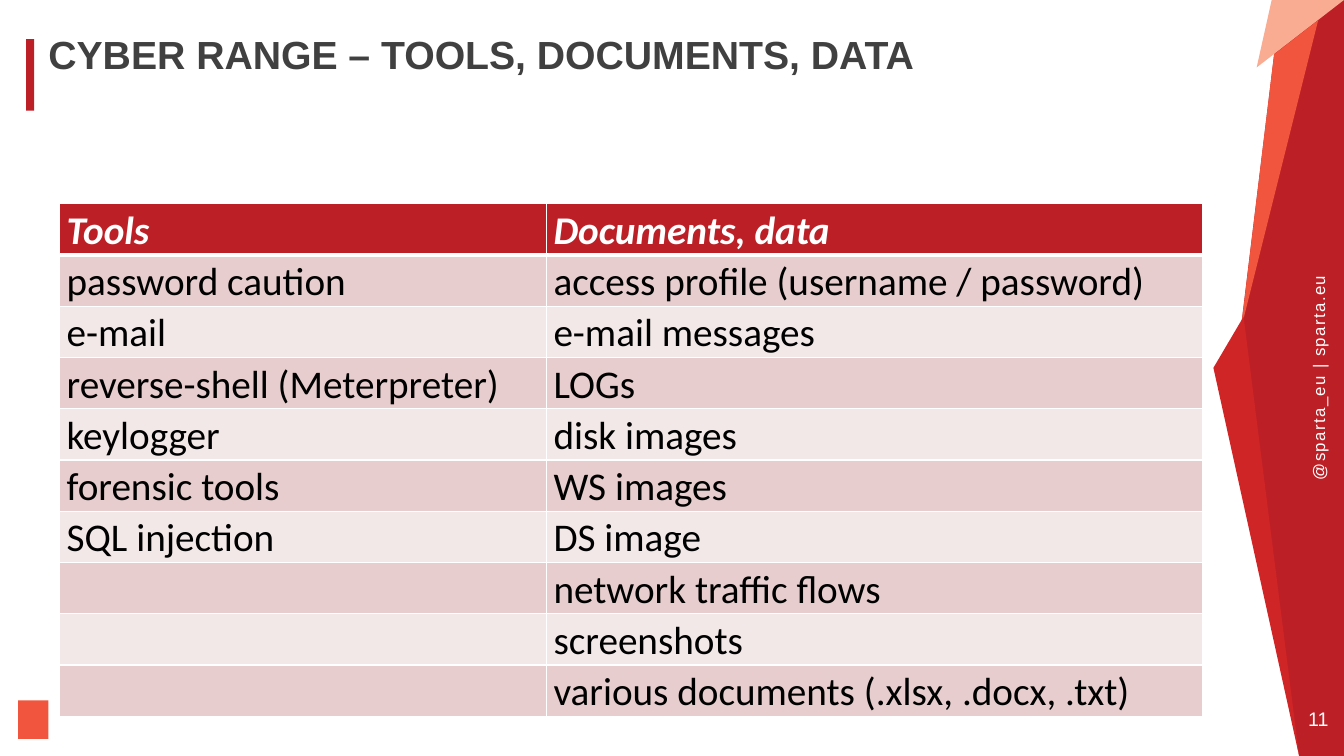
"""Build the slide on cyber range tools, documents and data."""
from typing import NamedTuple

from lxml.etree import SubElement
from pptx import Presentation
from pptx.dml.color import RGBColor
from pptx.enum.shapes import MSO_SHAPE
from pptx.enum.text import MSO_ANCHOR, PP_ALIGN
from pptx.oxml.ns import qn
from pptx.util import Cm, Pt

COLORS = {
    "red": "BC2026", "bright": "D02527", "orange": "F1553D", "peach": "F9AC91",
    "white": "FFFFFF", "black": "000000", "gray": "404040",
    "odd": "E7CDCD", "even": "F3E8E8",
}


class Facet(NamedTuple):
    color: str
    points: list[tuple[float, float]]


class Block(NamedTuple):
    color: str
    box: tuple[float, float, float, float]


class Label(NamedTuple):
    words: str
    box: tuple[float, float, float, float]
    style: dict
    turn: int = 0
    anchor: MSO_ANCHOR = MSO_ANCHOR.MIDDLE
    wrap: bool = False


WIDTH, HEIGHT = 33.87, 19.05

FACETS = [
    Facet("red", [(WIDTH, 0), (WIDTH, HEIGHT), (32.74, HEIGHT), (31.06, 10.01),
                  (32.11, 1.37), (32.41, 0)]),
    Facet("peach", [(WIDTH, 0), (31.67, 1.7), (32.05, 0)]),
    Facet("orange", [(33.22, 0.51), (31.27, 8.31), (32.11, 1.37)]),
    Facet("bright", [(31.34, 7.98), (32.74, HEIGHT), (30.58, 9.27)]),
]

BLOCKS = [
    Block("red", (0.66, 0.99, 0.2, 1.8)),
    Block("orange", (0.46, 17.65, 0.76, 0.97)),
]

LABELS = [
    Label("CYBER RANGE – TOOLS, DOCUMENTS, DATA", (1.22, 0.89, 28.8, 2.21),
          {"size": 28, "color": "gray", "bold": True, "lines": 0.9},
          anchor=MSO_ANCHOR.TOP, wrap=True),
    Label("@sparta_eu | sparta.eu", (30.61, 9.27, 5.23, 0.51),
          {"size": 12, "align": PP_ALIGN.CENTER, "track": 1}, turn=270),
    Label("11", (32.92, 17.81, 0.61, 0.61),
          {"size": 14, "align": PP_ALIGN.CENTER}),
]

ROWS = [
    ("Tools", "Documents, data"),
    ("password caution", "access profile (username / password)"),
    ("e-mail", "e-mail messages"),
    ("reverse-shell (Meterpreter)", "LOGs"),
    ("keylogger", "disk images"),
    ("forensic tools", "WS images"),
    ("SQL injection", "DS image"),
    ("", "network traffic flows"),
    ("", "screenshots"),
    ("", "various documents (.xlsx, .docx, .txt)"),
]
COLUMNS = (12.27, 16.54)
ROW = 1.21


def paint(fill, color: str) -> None:
    fill.solid()
    fill.fore_color.rgb = RGBColor.from_string(COLORS[color])


def write(frame, words: str, *, size: int, color: str = "white",
          font: str = "Arial", bold: bool = False, italic: bool = False,
          align: PP_ALIGN = PP_ALIGN.LEFT, lines: float = 1.0,
          track: int = 0) -> None:
    para = frame.paragraphs[0]
    para.alignment = align
    para.line_spacing = lines
    run = para.add_run()
    run.text = words
    run.font.name = font
    run.font.size = Pt(size)
    run.font.bold = bold
    run.font.italic = italic
    run.font.color.rgb = RGBColor.from_string(COLORS[color])
    if track:
        run.font._element.set("spc", str(track * 100))


def finish(shape, color: str) -> None:
    paint(shape.fill, color)
    shape.line.fill.background()
    shape.shadow.inherit = False


def draw_facet(slide, facet: Facet) -> None:
    first, *rest = [(Cm(x), Cm(y)) for x, y in facet.points]
    outline = slide.shapes.build_freeform(*first)
    outline.add_line_segments(rest, close=True)
    finish(outline.convert_to_shape(), facet.color)


def draw_block(slide, block: Block) -> None:
    shape = slide.shapes.add_shape(MSO_SHAPE.RECTANGLE, *map(Cm, block.box))
    finish(shape, block.color)


def draw_label(slide, label: Label) -> None:
    box = slide.shapes.add_textbox(*map(Cm, label.box))
    box.rotation = label.turn
    frame = box.text_frame
    frame.margin_left = frame.margin_right = 0
    frame.margin_top = frame.margin_bottom = 0
    frame.word_wrap = label.wrap
    frame.vertical_anchor = label.anchor
    write(frame, label.words, **label.style)


def add_edges(cell, top: int, bottom: int) -> None:
    props = cell._tc.get_or_add_tcPr()
    for side, width in (("L", 1), ("R", 1), ("T", top), ("B", bottom)):
        edge = SubElement(props, qn(f"a:ln{side}"), w=str(Pt(width)))
        fill = SubElement(edge, qn("a:solidFill"))
        SubElement(fill, qn("a:srgbClr"), val=COLORS["white"])


def draw_table(slide) -> None:
    table = slide.shapes.add_table(
        len(ROWS), len(COLUMNS), Cm(1.5), Cm(5.13),
        Cm(sum(COLUMNS)), Cm(ROW * len(ROWS))).table
    for column, width in zip(table.columns, COLUMNS):
        column.width = Cm(width)
    for i, words in enumerate(ROWS):
        head = i == 0
        table.rows[i].height = Cm(ROW)
        for j, item in enumerate(words):
            cell = table.cell(i, j)
            cell.margin_left = cell.margin_right = Cm(0.18)
            cell.margin_top = cell.margin_bottom = 0
            add_edges(cell, 3 if i == 1 else 1, 3 if head else 1)
            paint(cell.fill, "red" if head else "odd" if i % 2 else "even")
            if item:
                write(cell.text_frame, item, size=28, font="Calibri",
                      color="white" if head else "black",
                      bold=head, italic=head, lines=1.07)


def main() -> None:
    deck = Presentation()
    deck.slide_width, deck.slide_height = Cm(WIDTH), Cm(HEIGHT)
    slide = deck.slides.add_slide(deck.slide_layouts[6])
    paint(slide.background.fill, "white")
    for facet in FACETS:
        draw_facet(slide, facet)
    for block in BLOCKS:
        draw_block(slide, block)
    draw_table(slide)
    for label in LABELS:
        draw_label(slide, label)
    deck.save("out.pptx")


if __name__ == "__main__":
    main()
